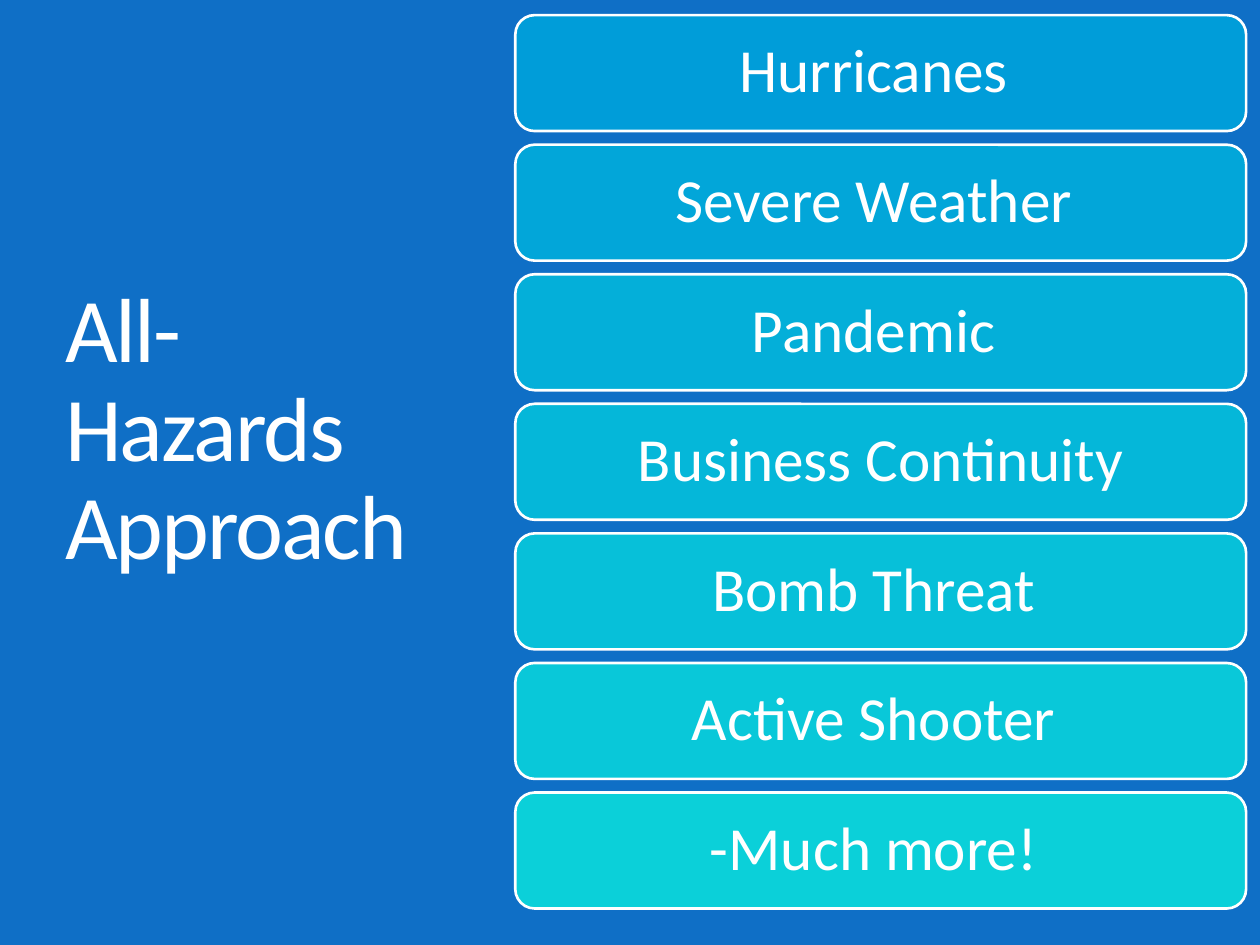
import pptx
import pptx.util
import pptx.dml.color
import pptx.enum.shapes
import pptx.enum.text

Inches = pptx.util.Inches
Pt = pptx.util.Pt
ALIGN = pptx.enum.text.PP_ALIGN


def color(code):
    return pptx.dml.color.RGBColor.from_string(code)


class Deck:
    """Holds the style and the current slide."""
    font = "Calibri"
    ink = "FFFFFF"
    back = "0F6FC6"

    def __init__(self):
        self.prs = pptx.Presentation()
        self.prs.slide_width = Inches(10)
        self.prs.slide_height = Inches(7.5)
        self.slide = self.prs.slides.add_slide(self.prs.slide_layouts[6])
        fill = self.slide.background.fill
        fill.solid()
        fill.fore_color.rgb = color(self.back)

    def label(self, shape, text, size, align, track=None):
        """Put one styled run in the shape; track is in points."""
        frame = shape.text_frame
        frame.word_wrap = True
        frame.vertical_anchor = pptx.enum.text.MSO_ANCHOR.MIDDLE
        para = frame.paragraphs[0]
        para.alignment = align
        para.line_spacing = 0.9
        run = para.add_run()
        run.text = text
        run.font.name = self.font
        run.font.size = Pt(size)
        run.font.color.rgb = color(self.ink)
        if track is not None:
            run._r.get_or_add_rPr().set("spc", str(round(track * 100)))

    def title(self, text, left, top, width, height):
        box = self.slide.shapes.add_textbox(
            Inches(left), Inches(top), Inches(width), Inches(height))
        self.label(box, text, 52, ALIGN.LEFT, -1.2)

    def bar(self, text, fill, left, top, width, height):
        shape = self.slide.shapes.add_shape(
            pptx.enum.shapes.MSO_SHAPE.ROUNDED_RECTANGLE,
            Inches(left), Inches(top), Inches(width), Inches(height))
        shape.shadow.inherit = False
        shape.fill.solid()
        shape.fill.fore_color.rgb = color(fill)
        shape.line.color.rgb = color(self.ink)
        shape.line.width = Pt(1.5)
        frame = shape.text_frame
        frame.margin_left = frame.margin_right = Inches(0.15)
        frame.margin_top = frame.margin_bottom = Inches(0.15)
        self.label(shape, text, 35, ALIGN.CENTER)


HAZARDS = [
    ("Hurricanes ", "009DD9"),
    ("Severe Weather ", "02A6D9"),
    ("Pandemic ", "04AFD9"),
    ("Business Continuity", "05B7D9"),
    ("Bomb Threat ", "07C0D9"),
    ("Active Shooter ", "09C8D9"),
    ("-Much more! ", "0BD0D9"),
]
FIRST, LAST = 0.12, 6.29


def main():
    deck = Deck()
    deck.title("All-Hazards Approach", 0.42, 0.42, 3.28, 6.01)
    step = (LAST - FIRST) / (len(HAZARDS) - 1)
    for row, (text, fill) in enumerate(HAZARDS):
        deck.bar(text, fill, 4.09, FIRST + row * step, 5.8, 0.92)
    deck.prs.save("out.pptx")


if __name__ == "__main__":
    main()
